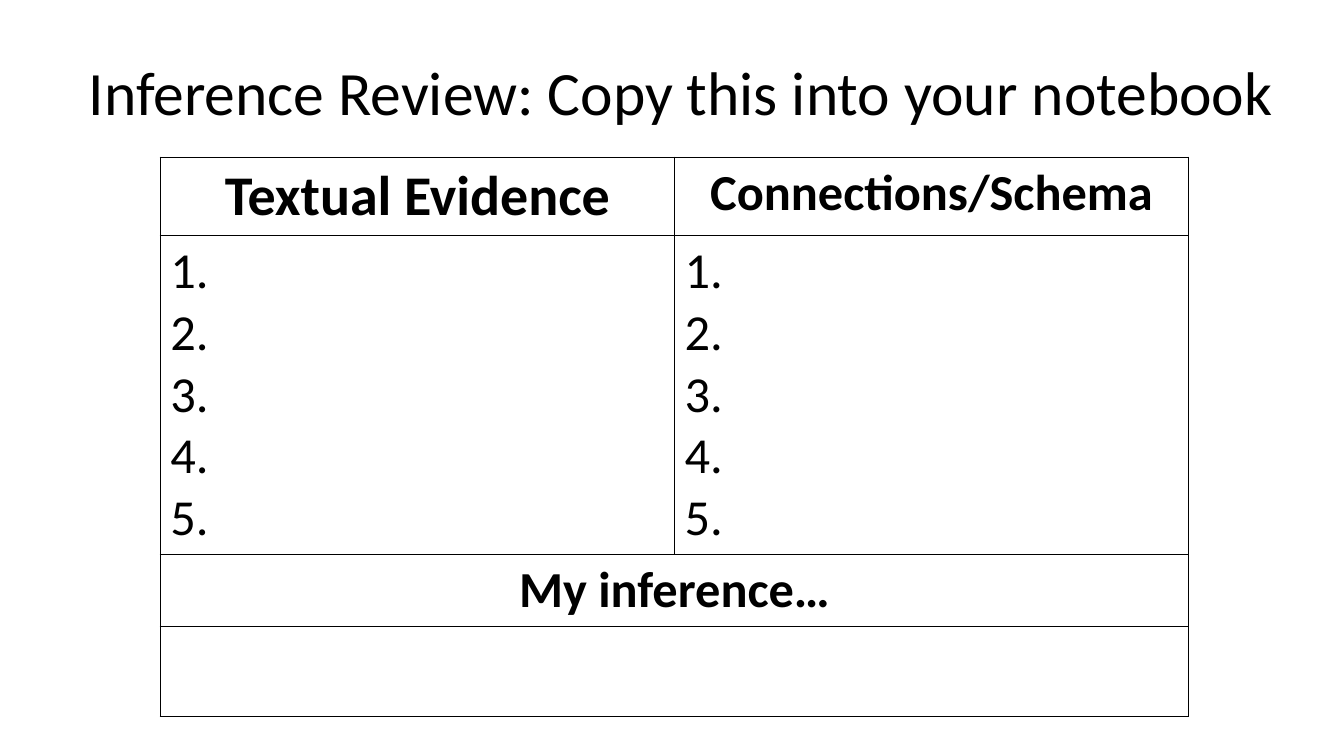
from pptx import Presentation
from pptx.dml.color import RGBColor
from pptx.enum.text import MSO_ANCHOR, MSO_AUTO_SIZE, PP_ALIGN
from pptx.oxml import parse_xml
from pptx.oxml.ns import nsdecls
from pptx.util import Inches, Pt

TITLE = "Inference Review: Copy this into your notebook"
NUMBERS = ["1.", "2.", "3.", "4.", "5."]
ROWS = [
    {"cells": [["Textual Evidence"], ["Connections/Schema"]], "height": 0.78, "sizes": ["head", "body"], "bold": True},
    {"cells": [NUMBERS, NUMBERS], "height": 3.16, "sizes": ["body", "body"], "bold": False},
    {"cells": [["My inference…"]], "height": 0.72, "sizes": ["body"], "bold": True},
    {"cells": [[]], "height": 0.89, "sizes": ["body"], "bold": False},
]
THEME = {
    "font": "Calibri",
    "ink": "000000",
    "sizes": {"title": 44, "head": 40, "body": 36},
    "border": 1,
}
SLIDE = (13.33, 7.5)
TITLE_BOX = (0.78, 0.22, 12.19, 1.45)
TABLE_LEFT, TABLE_TOP, TABLE_WIDTH = 1.59, 1.56, 10.2
COLUMNS = 2


def apply(target, values):
    for name, value in values.items():
        setattr(target, name, value)


def style(font, size, bold=False):
    apply(font, {"name": THEME["font"], "size": Pt(THEME["sizes"][size]), "bold": bold})
    font.color.rgb = RGBColor.from_string(THEME["ink"])


def add_borders(cell):
    properties = cell._tc.get_or_add_tcPr()
    for index, side in enumerate("LRTB"):
        properties.insert(index, parse_xml(
            f'<a:ln{side} {nsdecls("a")} w="{Pt(THEME["border"])}"><a:solidFill>'
            f'<a:srgbClr val="{THEME["ink"]}"/></a:solidFill></a:ln{side}>'
        ))


def add_title(page):
    title = page.shapes.title
    apply(title, dict(zip(("left", "top", "width", "height"), map(Inches, TITLE_BOX))))
    frame = title.text_frame
    frame.text = TITLE
    apply(frame, {"word_wrap": True, "auto_size": MSO_AUTO_SIZE.NONE,
                  "vertical_anchor": MSO_ANCHOR.MIDDLE})
    para = frame.paragraphs[0]
    apply(para, {"alignment": PP_ALIGN.LEFT, "line_spacing": 0.9})
    style(para.runs[0].font, "title")


def fill_cell(cell, lines, size, bold):
    frame = cell.text_frame
    for index, line in enumerate(lines):
        para = frame.add_paragraph() if index else frame.paragraphs[0]
        para.alignment = PP_ALIGN.CENTER if bold else PP_ALIGN.LEFT
        span = para.add_run()
        span.text = line
        style(span.font, size, bold)


def add_organizer(page):
    height = sum(row["height"] for row in ROWS)
    table = page.shapes.add_table(
        len(ROWS), COLUMNS,
        *map(Inches, (TABLE_LEFT, TABLE_TOP, TABLE_WIDTH, height)),
    ).table
    apply(table, {"first_row": False, "horz_banding": False})
    for column in table.columns:
        column.width = Inches(TABLE_WIDTH / COLUMNS)
    for index, row in enumerate(ROWS):
        table.rows[index].height = Inches(row["height"])
        for position in range(COLUMNS):
            cell = table.cell(index, position)
            cell.fill.background()
            add_borders(cell)
        if len(row["cells"]) == 1:
            table.cell(index, 0).merge(table.cell(index, COLUMNS - 1))
        for position, (lines, size) in enumerate(zip(row["cells"], row["sizes"])):
            fill_cell(table.cell(index, position), lines, size, row["bold"])


def main():
    deck = Presentation()
    apply(deck, dict(zip(("slide_width", "slide_height"), map(Inches, SLIDE))))
    page = deck.slides.add_slide(deck.slide_layouts.get_by_name("Title Only"))
    add_title(page)
    add_organizer(page)
    deck.save("out.pptx")


if __name__ == "__main__":
    main()
